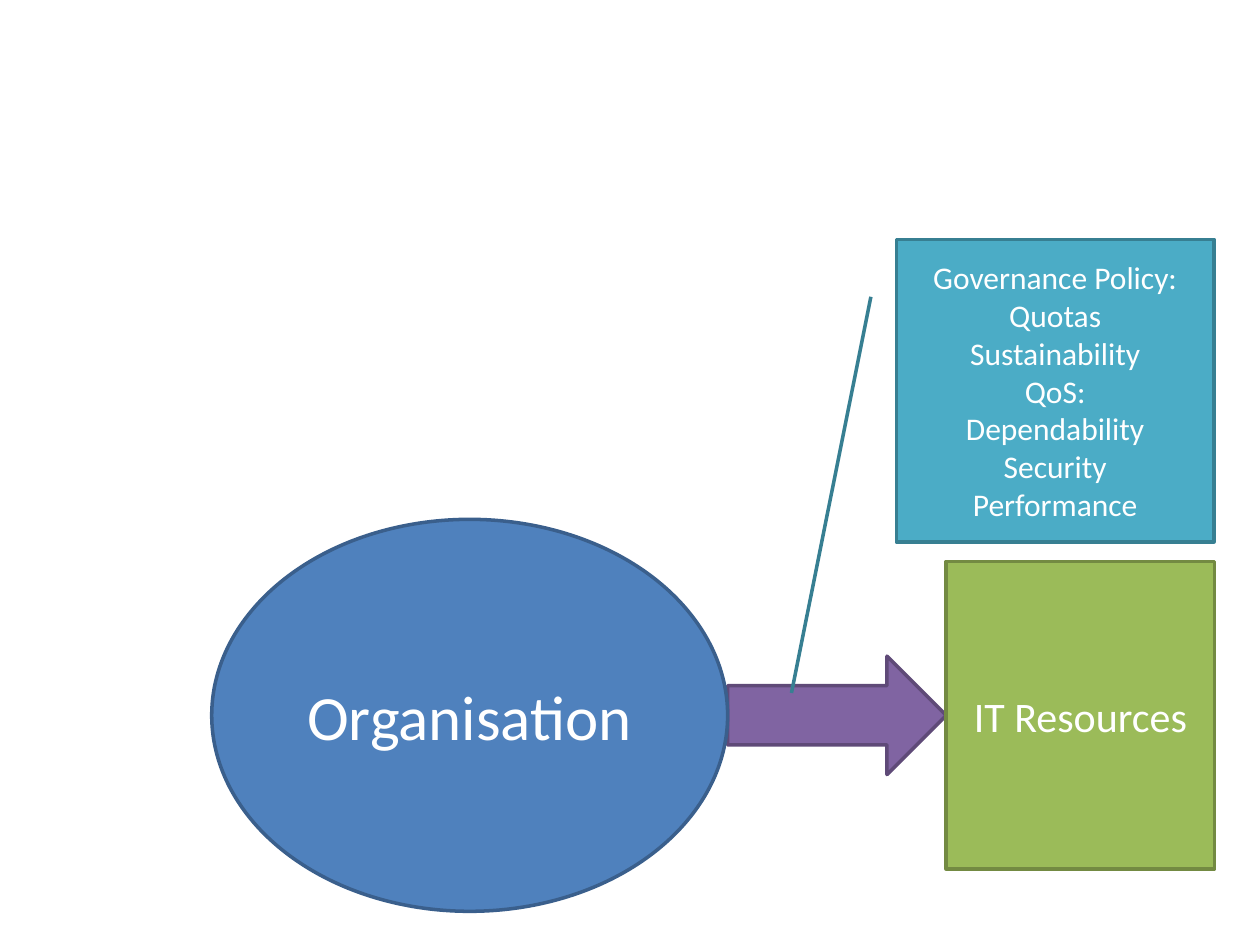
from pptx import Presentation
from pptx.dml.color import RGBColor
from pptx.enum.shapes import MSO_SHAPE
from pptx.enum.text import MSO_ANCHOR, PP_ALIGN
from pptx.util import Pt

WHITE = RGBColor(0xFF, 0xFF, 0xFF)
BLUE, BLUE_EDGE = RGBColor(0x4F, 0x81, 0xBD), RGBColor(0x3A, 0x5F, 0x8C)
GREEN, GREEN_EDGE = RGBColor(0x9B, 0xBB, 0x59), RGBColor(0x73, 0x8A, 0x42)
PURPLE, PURPLE_EDGE = RGBColor(0x80, 0x64, 0xA2), RGBColor(0x5F, 0x4A, 0x78)
TEAL, TEAL_EDGE = RGBColor(0x4B, 0xAC, 0xC6), RGBColor(0x37, 0x7F, 0x92)

POLICY_LINES = [
    "Governance Policy:",
    "Quotas",
    "Sustainability",
    "QoS:",
    "Dependability",
    "Security",
    "Performance",
]


def write_text(shape, text, *, size, color=WHITE, font="Calibri", align=PP_ALIGN.CENTER):
    """Fill a shape with text, one paragraph for each line."""
    frame = shape.text_frame
    frame.word_wrap = True
    frame.vertical_anchor = MSO_ANCHOR.MIDDLE
    frame.text = text
    for para in frame.paragraphs:
        para.alignment = align
        for span in para.runs:
            span.font.name = font
            span.font.size = Pt(size)
            span.font.color.rgb = color


def add_block(page, kind, box, fill, edge):
    """Add a filled, outlined preset shape in a box of left, top, width, height."""
    shape = page.shapes.add_shape(kind, *(Pt(length) for length in box))
    shape.shadow.inherit = False
    shape.fill.solid()
    shape.fill.fore_color.rgb = fill
    shape.line.color.rgb = edge
    shape.line.width = Pt(2)
    return shape


def draw_resource_flow(page, box):
    """Draw the organisation, its resources and the arrow between them in a box."""
    left, top, width, height = box
    organisation_width, resources_width = 294.8, 153.4
    resources_height, arrow_height = 175.7, 67.7
    middle = top + height / 2
    arrow_left = left + organisation_width
    resources_left = left + width - resources_width

    arrow_box = (arrow_left, middle - arrow_height / 2,
                 resources_left - arrow_left, arrow_height)
    add_block(page, MSO_SHAPE.RIGHT_ARROW, arrow_box, PURPLE, PURPLE_EDGE)

    resources_box = (resources_left, middle - resources_height / 2,
                     resources_width, resources_height)
    resources = add_block(page, MSO_SHAPE.RECTANGLE, resources_box, GREEN, GREEN_EDGE)
    write_text(resources, "IT Resources", size=24)

    organisation_box = (left, top, organisation_width, height)
    organisation = add_block(page, MSO_SHAPE.OVAL, organisation_box, BLUE, BLUE_EDGE)
    write_text(organisation, "Organisation", size=36)


def draw_policy_callout(page, box):
    """Draw the governance policy callout, its line pointing at the arrow."""
    callout = add_block(page, MSO_SHAPE.LINE_CALLOUT_1, box, TEAL, TEAL_EDGE)
    for index, value in enumerate((0.19, -0.08, 1.5, -0.33)):
        callout.adjustments[index] = value
    write_text(callout, "\n".join(POLICY_LINES), size=18)


def main():
    """Build and save the slide."""
    deck = Presentation()
    deck.slide_width, deck.slide_height = Pt(720), Pt(540)
    page = deck.slides.add_slide(deck.slide_layouts[6])
    draw_resource_flow(page, (121, 296.8, 573.1, 224))
    draw_policy_callout(page, (512.2, 136.8, 181.6, 172.8))
    deck.save("out.pptx")


if __name__ == "__main__":
    main()
